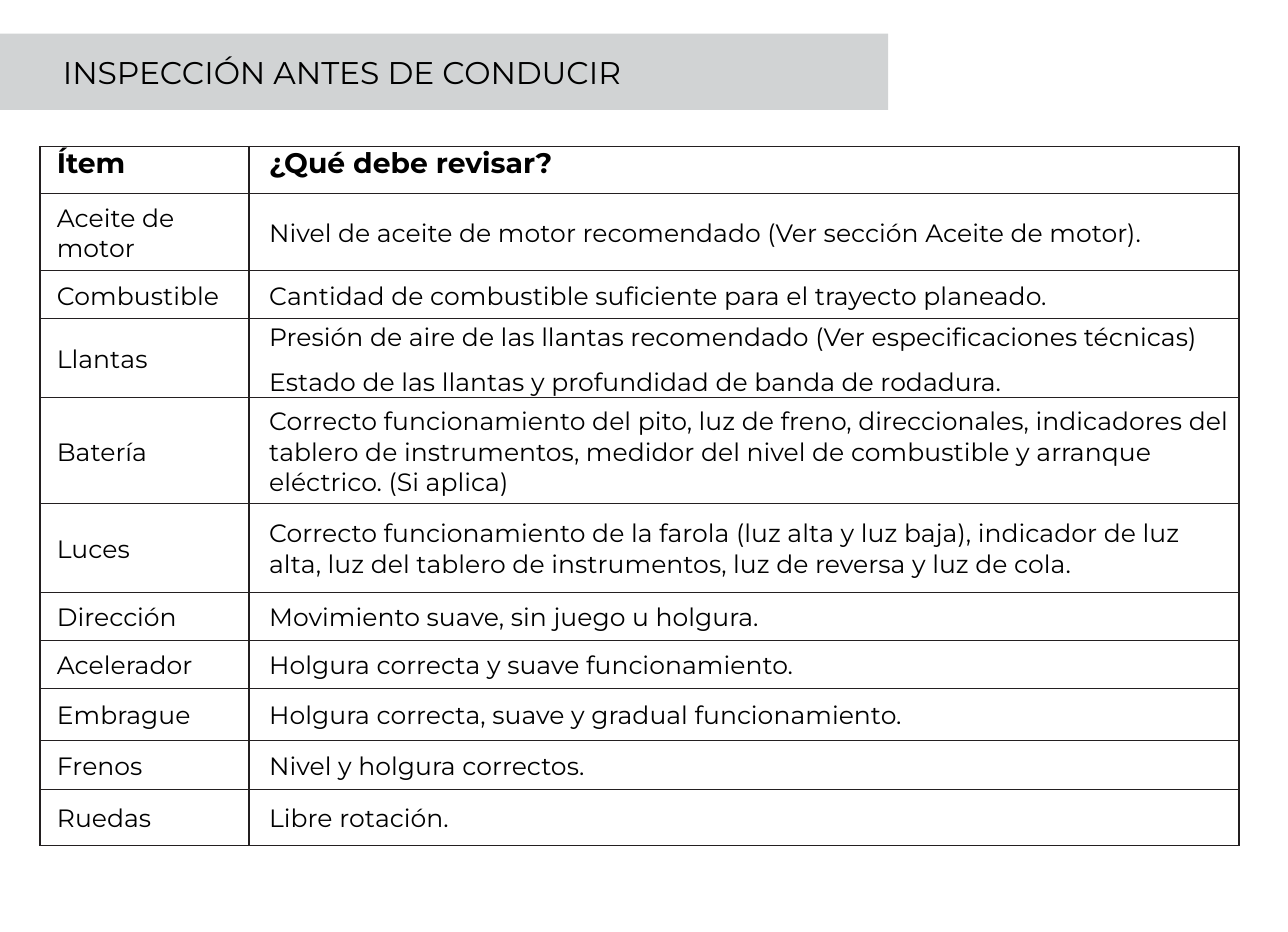
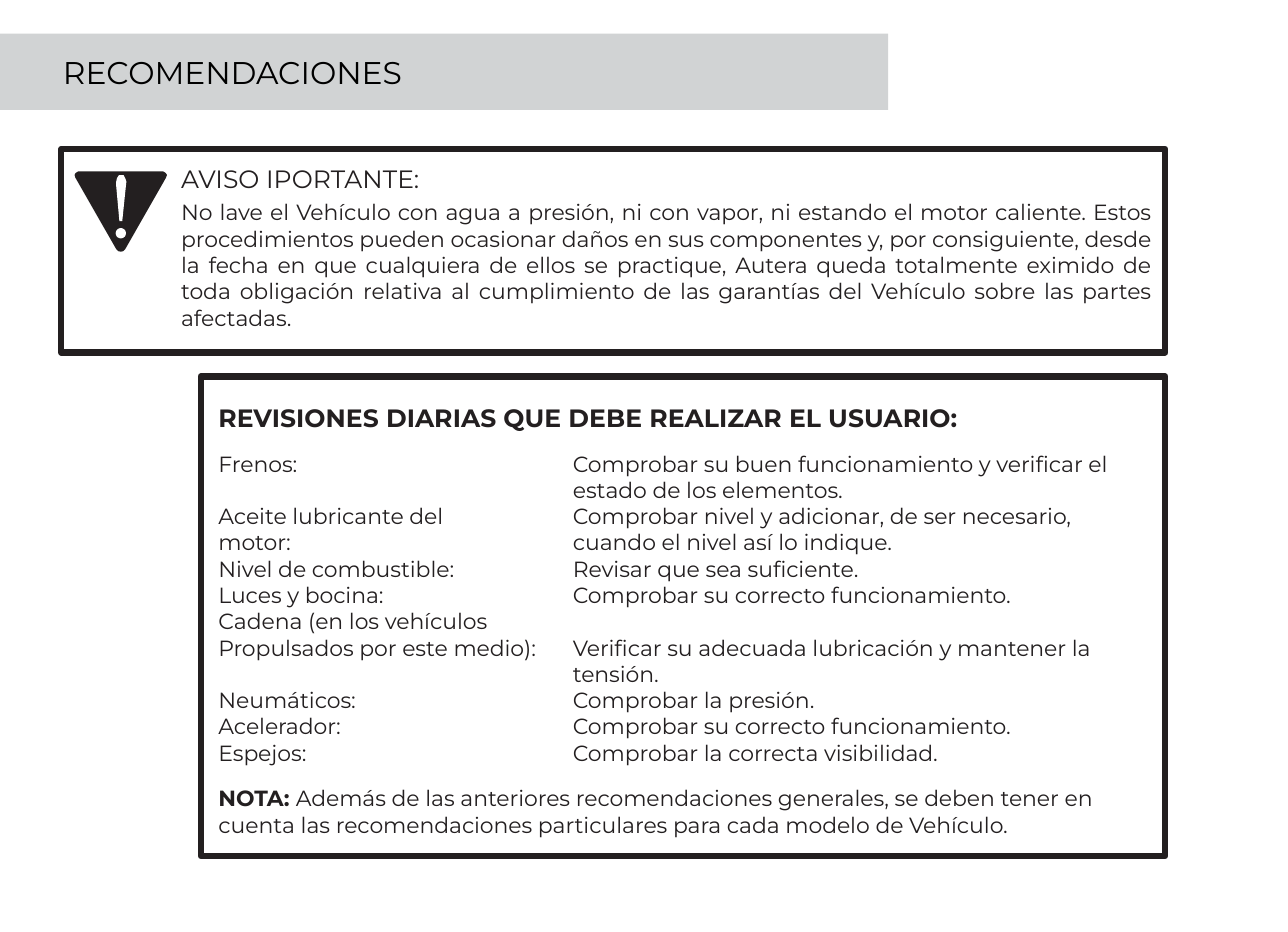
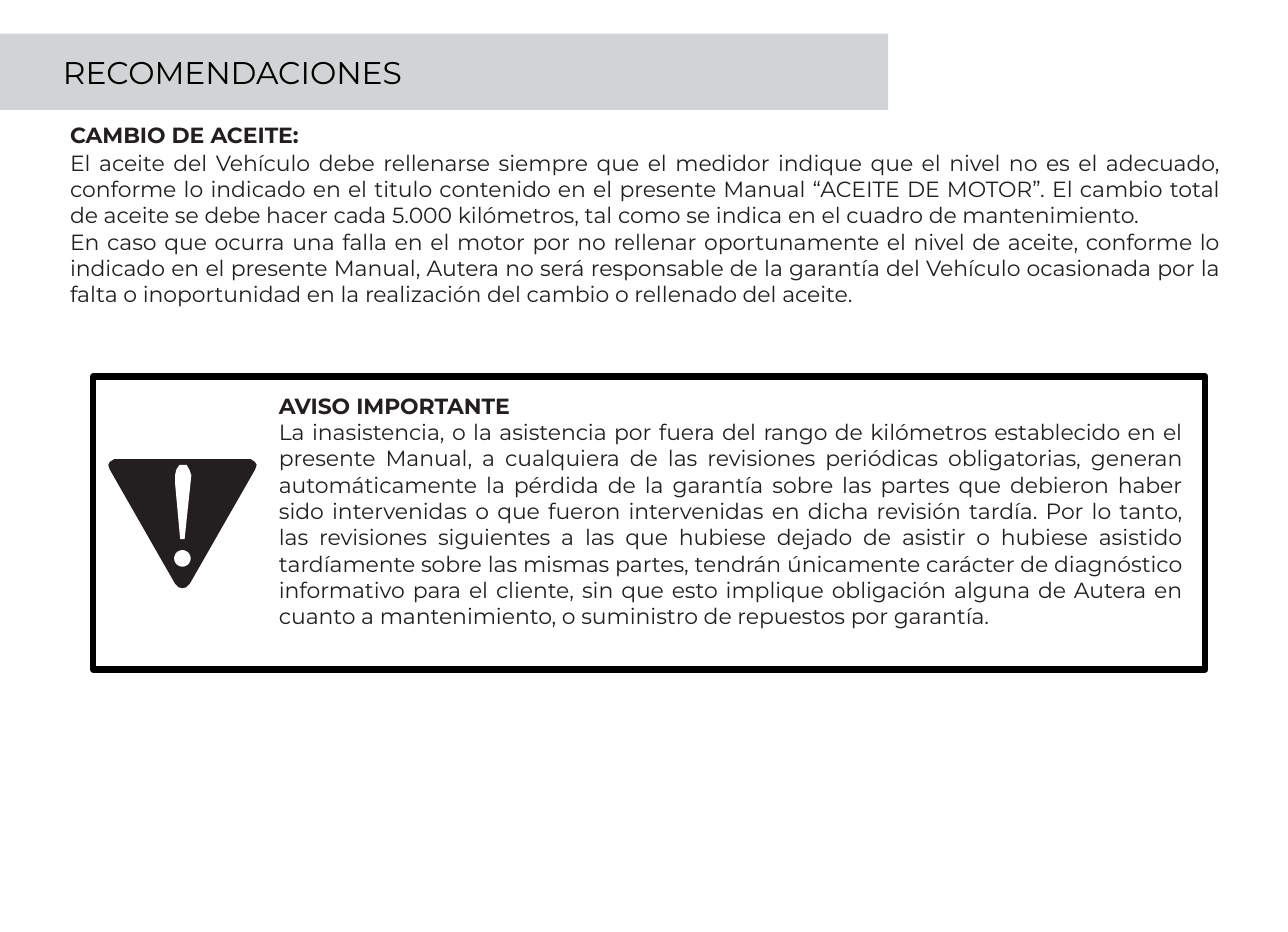
"""Build three slides of a vehicle manual: inspection table and recommendations."""
from math import cos, pi, sin

from pptx import Presentation
from pptx.dml.color import RGBColor
from pptx.enum.shapes import MSO_SHAPE as Shape
from pptx.enum.text import MSO_ANCHOR as Anchor, PP_ALIGN as Align
from pptx.oxml import parse_xml
from pptx.oxml.ns import nsdecls
from pptx.util import Cm, Pt

FONT = "Montserrat"
BLACK, INK, GREY, WHITE = "000000", "231F20", "D1D3D4", "FFFFFF"
BLANK_LINE = 8.4


def paint(fill, colour):
    """Give a fill a solid colour, or none."""
    if colour is None:
        fill.background()
    else:
        fill.solid()
        fill.fore_color.rgb = RGBColor.from_string(colour)


def write(holder, lines, colour=INK, align=Align.LEFT, insets=(0, 0, 0, 0), anchor=Anchor.TOP):
    """Fill a shape or cell with lines of (space before, size, [(text, bold), ...])."""
    frame = holder.text_frame
    frame.word_wrap = True
    area = holder if hasattr(holder, "vertical_anchor") else frame
    area.vertical_anchor = anchor
    area.margin_left, area.margin_top, area.margin_right, area.margin_bottom = map(Cm, insets)
    for index, (before, size, runs) in enumerate(lines):
        para = frame.add_paragraph() if index else frame.paragraphs[0]
        para.alignment = align
        para.space_before = Pt(before)
        for text, bold in runs:
            span = para.add_run()
            span.text = text
            span.font.name = FONT
            span.font.size = Pt(size)
            span.font.bold = bold
            paint(span.font.fill, colour)


deck = Presentation()
deck.slide_width, deck.slide_height = Pt(411), Pt(297.5)

pages = []
for title in ("INSPECCIÓN ANTES DE CONDUCIR", "RECOMENDACIONES", "RECOMENDACIONES"):
    page = deck.slides.add_slide(deck.slide_layouts[6])
    band = page.shapes.add_shape(Shape.RECTANGLE, Cm(0), Cm(0.38), Cm(10), Cm(0.86))
    band.shadow.inherit = False
    paint(band.fill, GREY)
    paint(band.line.fill, None)
    write(band, [(0, 10, [(title, False)])], BLACK, insets=(0.71, 0, 0, 0), anchor=Anchor.MIDDLE)
    pages.append(page)
inspection, daily, oil = pages

checks = [
    (0.53, "Ítem", ["¿Qué debe revisar?"]),
    (0.87, "Aceite de motor", ["Nivel de aceite de motor recomendado (Ver sección Aceite de motor)."]),
    (0.54, "Combustible", ["Cantidad de combustible suficiente para el trayecto planeado."]),
    (0.89, "Llantas", ["Presión de aire de las llantas recomendado (Ver especificaciones técnicas)",
                       "Estado de las llantas y profundidad de banda de rodadura."]),
    (1.19, "Batería", ["Correcto funcionamiento del pito, luz de freno, direccionales, indicadores del "
                       "tablero de instrumentos, medidor del nivel de combustible y arranque "
                       "eléctrico. (Si aplica)"]),
    (1.0, "Luces", ["Correcto funcionamiento de la farola (luz alta y luz baja), indicador de luz "
                    "alta, luz del tablero de instrumentos, luz de reversa y luz de cola."]),
    (0.54, "Dirección", ["Movimiento suave, sin juego u holgura."]),
    (0.54, "Acelerador", ["Holgura correcta y suave funcionamiento."]),
    (0.59, "Embrague", ["Holgura correcta, suave y gradual funcionamiento."]),
    (0.55, "Frenos", ["Nivel y holgura correctos."]),
    (0.63, "Ruedas", ["Libre rotación."]),
]
widths, indents = (2.35, 11.15), (0.19, 0.23)
table = inspection.shapes.add_table(
    len(checks), len(widths), Cm(0.45), Cm(1.65), Cm(sum(widths)), Cm(sum(check[0] for check in checks))).table
table.first_row = table.horz_banding = False
for column, width in zip(table.columns, widths):
    column.width = Cm(width)
for row, (height, item, details) in enumerate(checks):
    table.rows[row].height = Cm(height)
    header = row == 0
    size = 9 if header else 8
    top_inset = 0 if header else 0.03
    anchor = Anchor.TOP if header else Anchor.MIDDLE
    borders = {"L": 0.6, "R": 0.6, "T": 0.6 if row == 1 else 0.4, "B": 0.6 if header else 0.4}
    for column, texts in enumerate(([item], details)):
        cell = table.cell(row, column)
        lines = [(4.4 if index else 0, size, [(text, header)]) for index, text in enumerate(texts)]
        write(cell, lines, BLACK, insets=(indents[column], top_inset, 0, 0), anchor=anchor)
        paint(cell.fill, None)
        for place, (side, weight) in enumerate(borders.items()):
            cell._tc.tcPr.insert(place, parse_xml(
                f'<a:ln{side} {nsdecls("a")} w="{Pt(weight)}"><a:solidFill><a:srgbClr val="{INK}"/>'
                f'</a:solidFill></a:ln{side}>'))

washing_notice = [
    (0, 8, [("AVISO IPORTANTE:", False)]),
    (1.8, 7, [("No lave el Vehículo con agua a presión, ni con vapor, ni estando el motor caliente. Estos "
               "procedimientos pueden ocasionar daños en sus componentes y, por consiguiente, desde la fecha en "
               "que cualquiera de ellos se practique, Autera queda totalmente eximido de toda obligación relativa "
               "al cumplimiento de las garantías del Vehículo sobre las partes afectadas.", False)]),
]
frames = [
    (daily, 0.69, 1.68, 12.43, 2.29, INK, washing_notice),
    (daily, 2.26, 4.24, 10.86, 5.4, INK, []),
    (oil, 1.05, 4.24, 12.52, 3.3, BLACK, []),
]
for page, left, top, width, height, colour, lines in frames:
    frame = page.shapes.add_shape(Shape.RECTANGLE, Cm(left), Cm(top), Cm(width), Cm(height))
    frame.shadow.inherit = False
    paint(frame.fill, None)
    paint(frame.line.fill, colour)
    frame.line.width = Pt(2)
    write(frame, lines, align=Align.JUSTIFY, insets=(1.35, 0.16, 0.16, 0))

triangle = [(40, 0), (960, 0), (990, 20), (1000, 40), (990, 70), (550, 840), (525, 865),
            (500, 870), (475, 865), (450, 840), (10, 70), (0, 40), (10, 20)]
stroke = [(480, 40), (530, 40), (550, 80), (560, 110), (555, 160), (515, 540), (485, 540),
          (450, 160), (450, 110), (460, 70)]
dot = [(500 + 56 * cos(step * pi / 10), 670 + 56 * sin(step * pi / 10)) for step in range(20)]
for page, left, top, width in ((daily, 0.84, 1.93, 1.04), (oil, 1.22, 5.17, 1.67)):
    for colour, outlines in ((INK, [triangle]), (WHITE, [stroke, dot])):
        builder = page.shapes.build_freeform(*outlines[0][0], scale=Cm(width) / 1000)
        for index, outline in enumerate(outlines):
            if index:
                builder.move_to(*outline[0])
            builder.add_line_segments(outline[1:], close=True)
        sign = builder.convert_to_shape(Cm(left), Cm(top))
        sign.shadow.inherit = False
        paint(sign.fill, colour)
        paint(sign.line.fill, None)

labels = [
    (0, "Frenos:"),
    (BLANK_LINE, "Aceite lubricante del motor:"),
    (0, "Nivel de combustible:"),
    (0, "Luces y bocina:"),
    (0, "Cadena (en los vehículos Propulsados por este medio):"),
    (BLANK_LINE, "Neumáticos:"),
    (0, "Acelerador:"),
    (0, "Espejos:"),
]
answers = [
    (0, "Comprobar su buen funcionamiento y verificar el estado de los elementos."),
    (0, "Comprobar nivel y adicionar, de ser necesario, cuando el nivel así lo indique."),
    (0, "Revisar que sea suficiente."),
    (0, "Comprobar su correcto funcionamiento."),
    (BLANK_LINE, "Verificar su adecuada lubricación y mantener la tensión."),
    (0, "Comprobar la presión."),
    (0, "Comprobar su correcto funcionamiento."),
    (0, "Comprobar la correcta visibilidad."),
]
label_lines, answer_lines = [
    [(before, 7, [(text, False)]) for before, text in column] for column in (labels, answers)]
heading = [(0, 8, [("REVISIONES DIARIAS QUE DEBE REALIZAR EL USUARIO:", True)])]
note = [(0, 7, [("NOTA: ", True),
                ("Además de las anteriores recomendaciones generales, se deben tener en cuenta las "
                 "recomendaciones particulares para cada modelo de Vehículo.", False)])]
oil_change = [
    (0, 7, [("CAMBIO DE ACEITE:", True)]),
    (0.5, 7, [("El aceite del Vehículo debe rellenarse siempre que el medidor indique que el nivel no es el "
               "adecuado, conforme lo indicado en el titulo contenido en el presente Manual “ACEITE DE MOTOR”. "
               "El cambio total de aceite se debe hacer cada 5.000 kilómetros, tal como se indica en el cuadro "
               "de mantenimiento.", False)]),
    (0, 7, [("En caso que ocurra una falla en el motor por no rellenar oportunamente el nivel de aceite, "
             "conforme lo indicado en el presente Manual, Autera no será responsable de la garantía del "
             "Vehículo ocasionada por la falta o inoportunidad en la realización del cambio o rellenado del "
             "aceite.", False)]),
]
warranty_notice = [
    (0, 7, [("AVISO IMPORTANTE", True)]),
    (0, 7, [("La inasistencia, o la asistencia por fuera del rango de kilómetros establecido en el presente "
             "Manual, a cualquiera de las revisiones periódicas obligatorias, generan automáticamente la pérdida "
             "de la garantía sobre las partes que debieron haber sido intervenidas o que fueron intervenidas en "
             "dicha revisión tardía. Por lo tanto, las revisiones siguientes a las que hubiese dejado de asistir "
             "o hubiese asistido tardíamente sobre las mismas partes, tendrán únicamente carácter de diagnóstico "
             "informativo para el cliente, sin que esto implique obligación alguna de Autera en cuanto a "
             "mantenimiento, o suministro de repuestos por garantía.", False)]),
]
texts = [
    (daily, 6.45, 5.07, 6.55, 3.58, Align.LEFT, answer_lines),
    (daily, 2.46, 5.07, 3.98, 3.58, Align.LEFT, label_lines),
    (daily, 2.46, 4.53, 10.2, 0.33, Align.LEFT, heading),
    (daily, 2.46, 8.84, 10.29, 0.61, Align.LEFT, note),
    (oil, 0.79, 1.37, 12.94, 2.4, Align.JUSTIFY, oil_change),
    (oil, 3.14, 4.42, 10.17, 2.7, Align.JUSTIFY, warranty_notice),
]
for page, left, top, width, height, align, lines in texts:
    box = page.shapes.add_textbox(Cm(left), Cm(top), Cm(width), Cm(height))
    write(box, lines, align=align)
    if lines is label_lines:
        for index, para in enumerate(box.text_frame.paragraphs):
            para._p.get_or_add_pPr().set("marR", str(Cm(0.9 if index == 1 else 0.2)))

deck.save("out.pptx")
